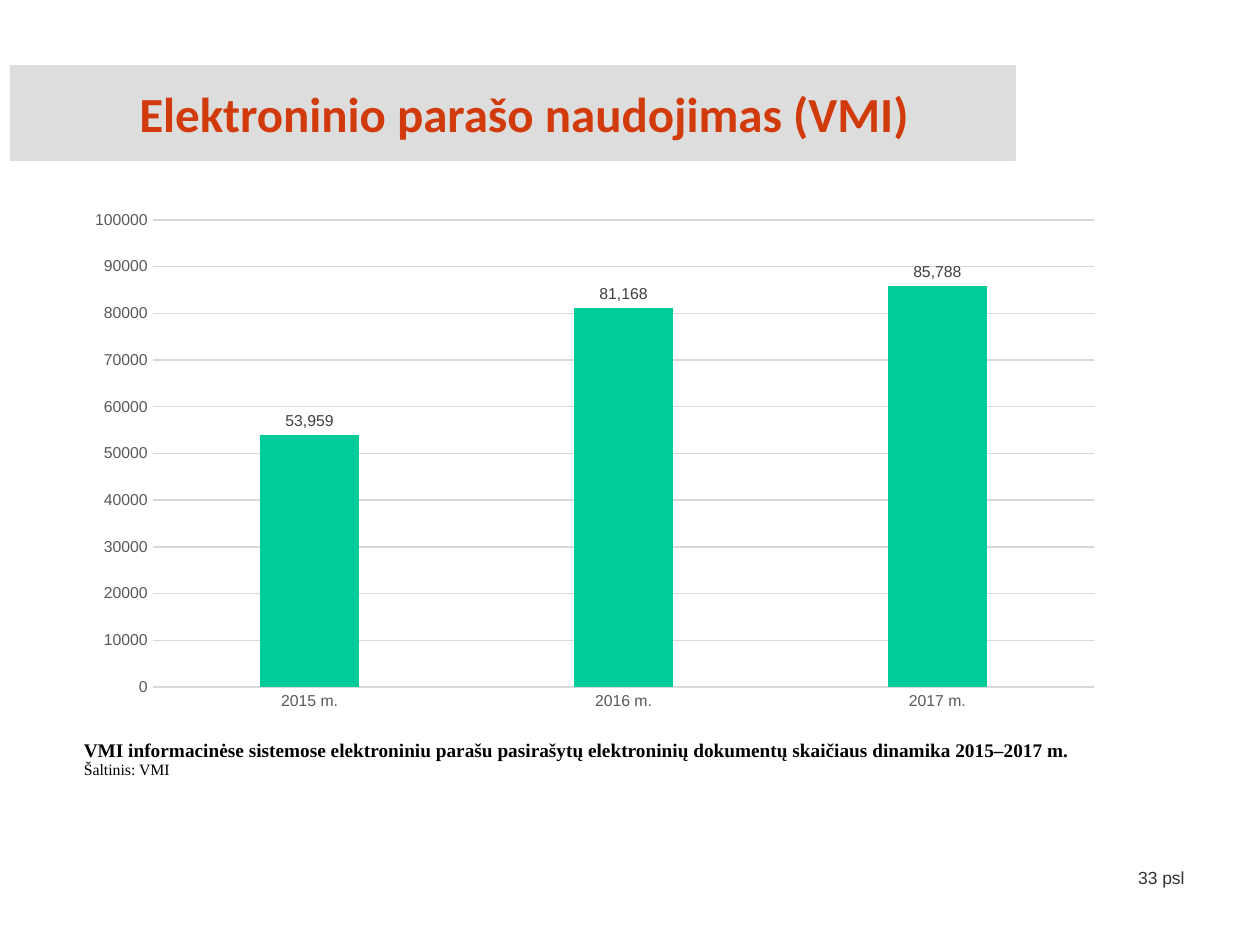
from pptx import Presentation
from pptx.chart.data import CategoryChartData
from pptx.dml.color import RGBColor
from pptx.enum.chart import XL_CHART_TYPE, XL_LABEL_POSITION, XL_TICK_MARK
from pptx.enum.shapes import MSO_SHAPE
from pptx.enum.text import MSO_ANCHOR, PP_ALIGN
from pptx.util import Pt

COLUMNS = XL_CHART_TYPE.COLUMN_CLUSTERED
OUTSIDE_END = XL_LABEL_POSITION.OUTSIDE_END
NO_TICKS = XL_TICK_MARK.NONE
RECTANGLE = MSO_SHAPE.RECTANGLE
MIDDLE = MSO_ANCHOR.MIDDLE
CENTER, RIGHT, JUSTIFY = PP_ALIGN.CENTER, PP_ALIGN.RIGHT, PP_ALIGN.JUSTIFY

COLORS = {
    "band": "DDDDDD", "title": "D13A0B", "bar": "00CC99", "grid": "D9D9D9",
    "axis": "595959", "label": "404040", "text": "000000", "page": "323232",
}


def color(name):
    return RGBColor.from_string(COLORS[name])


def write(paragraph, text, *, size, font, ink="text", bold=False, align=None):
    run = paragraph.add_run()
    run.text = text
    run.font.size = Pt(size)
    run.font.name = font
    run.font.bold = bold
    run.font.color.rgb = color(ink)
    paragraph.alignment = align


prs = Presentation()
prs.slide_width, prs.slide_height = Pt(720), Pt(540)
slide = prs.slides.add_slide(prs.slide_layouts[6])

# Page number
page = slide.shapes.add_textbox(Pt(635.8), Pt(491.8), Pt(48.2), Pt(18)).text_frame
page.word_wrap = True
write(page.paragraphs[0], "33 psl", size=10, font="Arial", ink="page", align=RIGHT)

# Title band
band = slide.shapes.add_shape(RECTANGLE, Pt(6.2), Pt(37.4), Pt(573.8), Pt(54))
band.shadow.inherit = False
band.fill.solid()
band.fill.fore_color.rgb = color("band")
band.line.color.rgb = color("band")
band.line.width = Pt(0.75)
title = band.text_frame
title.word_wrap = True
title.vertical_anchor = MIDDLE
title.margin_left, title.margin_right = Pt(12.5), 0
write(title.paragraphs[0], "Elektroninio parašo naudojimas (VMI)",
      size=28, font="Calibri", ink="title", bold=True, align=CENTER)

# Table that carries the caption below the chart
table = slide.shapes.add_table(2, 2, Pt(42.5), Pt(128.2), Pt(641.5), Pt(361)).table
table.first_row = table.horz_banding = False
for column, width in zip(table.columns, (628.5, 13)):
    column.width = Pt(width)
for row, height in zip(table.rows, (294.6, 66.4)):
    row.height = Pt(height)
for cell in table.iter_cells():
    cell.fill.background()
    cell.margin_left = cell.margin_right = Pt(5.4)
    cell.margin_top = cell.margin_bottom = 0
caption = table.cell(1, 0).text_frame
write(caption.paragraphs[0],
      "VMI informacinėse sistemose elektroniniu parašu pasirašytų "
      "elektroninių dokumentų skaičiaus dinamika 2015–2017 m.",
      size=11, font="Times New Roman", bold=True, align=JUSTIFY)
write(caption.add_paragraph(), "Šaltinis: VMI",
      size=9, font="Times New Roman", align=JUSTIFY)

# Signed documents per year
data = CategoryChartData()
data.categories = ["2015 m.", "2016 m.", "2017 m."]
data.add_series("Series 1", (53959, 81168, 85788))
chart = slide.shapes.add_chart(
    COLUMNS, Pt(42.5), Pt(114.5), Pt(594.7), Pt(297.4), data).chart
chart.has_legend = chart.has_title = False
chart.font.size = Pt(10)
chart.font.name = "Arial"
chart.font.color.rgb = color("text")

years, counts = chart.category_axis, chart.value_axis
counts.minimum_scale, counts.maximum_scale, counts.major_unit = 0, 100000, 10000
counts.tick_labels.number_format = "General"
counts.tick_labels.number_format_is_linked = False
for axis in (years, counts):
    axis.major_tick_mark = axis.minor_tick_mark = NO_TICKS
counts.format.line.fill.background()
for line in (years.format.line, counts.major_gridlines.format.line):
    line.color.rgb = color("grid")
    line.width = Pt(0.75)

plot = chart.plots[0]
plot.vary_by_categories = False
plot.gap_width, plot.overlap = 219, -27
bars = plot.series[0]
bars.format.fill.solid()
bars.format.fill.fore_color.rgb = color("bar")
labels = bars.data_labels
labels.show_value = True
labels.position = OUTSIDE_END
labels.number_format = "#,##0;\\-#,##0"
labels.number_format_is_linked = False

for font, ink in ((years.tick_labels.font, "axis"),
                  (counts.tick_labels.font, "axis"),
                  (labels.font, "label")):
    font.size = Pt(9)
    font.name = "Arial"
    font.color.rgb = color(ink)

prs.save("out.pptx")
